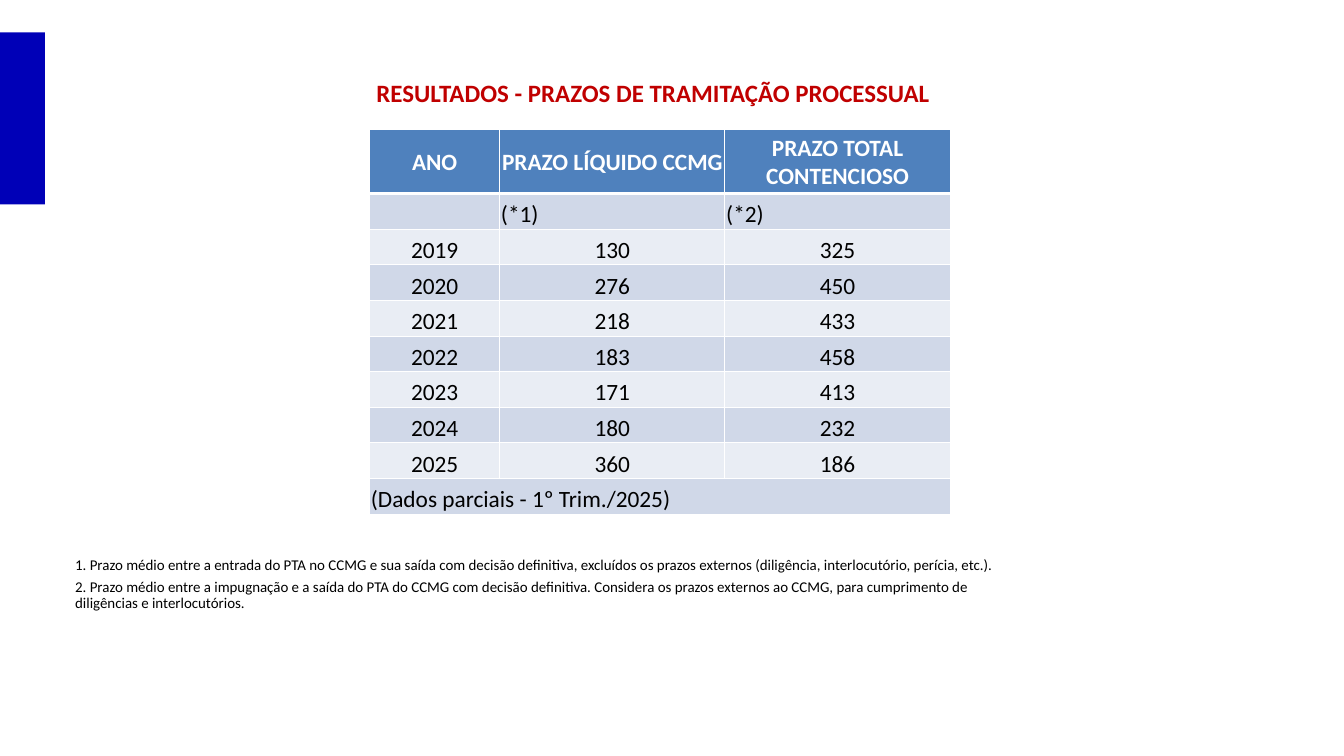
from collections import namedtuple
from dataclasses import dataclass

from lxml import etree
from pptx import Presentation
from pptx import util as u
from pptx.dml.color import RGBColor
from pptx.enum import shapes, text
from pptx.oxml import ns

Box = namedtuple("Box", "left top width height")


@dataclass(frozen=True)
class Theme:
    """Colours, typeface and type sizes of the slide."""
    font: str = "Calibri"
    accent: str = "0000B7"
    title: str = "C00000"
    header: str = "4F81BD"
    bands: tuple = ("D0D8E8", "E9EDF4")
    light: str = "FFFFFF"
    dark: str = "000000"
    title_size: float = 26.7
    table_size: float = 25
    note_size: float = 16


THEME = Theme()
PAGE = Box(0, 0, 20, 11.25)
TITLE = "RESULTADOS - PRAZOS DE TRAMITAÇÃO PROCESSUAL"
HEADINGS = ("ANO", "PRAZO LÍQUIDO CCMG", "PRAZO TOTAL CONTENCIOSO")
MARKS = ("", "(*1)", "(*2)")
TERMS = (
    ("2019", "130", "325"),
    ("2020", "276", "450"),
    ("2021", "218", "433"),
    ("2022", "183", "458"),
    ("2023", "171", "413"),
    ("2024", "180", "232"),
    ("2025", "360", "186"),
)
CAPTION = "(Dados parciais - 1º Trim./2025)"
NOTES = (
    "1. Prazo médio entre a entrada do PTA no CCMG e sua saída com decisão definitiva, "
    "excluídos os prazos externos (diligência, interlocutório, perícia, etc.).",
    "2. Prazo médio entre a impugnação e a saída do PTA do CCMG com decisão definitiva. "
    "Considera os prazos externos ao CCMG, para cumprimento de diligências e interlocutórios.",
)


def inches(box):
    """Return the four lengths of a box as slide units."""
    return [u.Inches(length) for length in box]


def style(para, size, color, bold=False, align=text.PP_ALIGN.LEFT):
    """Set the alignment and font of a paragraph."""
    para.alignment = align
    para.font.name = THEME.font
    para.font.size = u.Pt(size)
    para.font.bold = bold
    para.font.color.rgb = RGBColor.from_string(color)


def add_frame(page, box):
    """Add a wrapping, vertically centred text frame."""
    frame = page.shapes.add_textbox(*inches(box)).text_frame
    frame.word_wrap = True
    frame.vertical_anchor = text.MSO_ANCHOR.MIDDLE
    return frame


def add_accent(page, box):
    """Place the coloured block at the slide's edge."""
    block = page.shapes.add_shape(shapes.MSO_SHAPE.RECTANGLE, *inches(box))
    block.shadow.inherit = False
    block.fill.solid()
    block.fill.fore_color.rgb = RGBColor.from_string(THEME.accent)
    block.line.fill.background()


def add_title(page, box):
    """Place the centred heading."""
    para = add_frame(page, box).paragraphs[0]
    para.text = TITLE
    style(para, THEME.title_size, THEME.title, True, text.PP_ALIGN.CENTER)


def add_borders(cell, top, bottom):
    """Draw the cell's four edges, with widths in points."""
    properties = cell._tc.get_or_add_tcPr()
    for edge, width in (("L", 1), ("R", 1), ("T", top), ("B", bottom)):
        line = etree.SubElement(properties, ns.qn(f"a:ln{edge}"), w=str(u.Pt(width)))
        fill = etree.SubElement(line, ns.qn("a:solidFill"))
        etree.SubElement(fill, ns.qn("a:srgbClr"), val=THEME.light)


def fill_cell(cell, value, row, centred):
    """Write and format one table cell according to its row."""
    header = row == 0
    add_borders(cell, 3 if row == 1 else 1, 3 if header else 1)
    cell.fill.solid()
    color = THEME.header if header else THEME.bands[(row - 1) % 2]
    cell.fill.fore_color.rgb = RGBColor.from_string(color)
    cell.margin_left = cell.margin_right = cell.margin_top = u.Inches(0.02)
    cell.margin_bottom = 0
    cell.vertical_anchor = text.MSO_ANCHOR.MIDDLE if header else text.MSO_ANCHOR.BOTTOM
    para = cell.text_frame.paragraphs[0]
    para.text = value
    align = text.PP_ALIGN.CENTER if centred else text.PP_ALIGN.LEFT
    style(para, THEME.table_size, THEME.light if header else THEME.dark, header, align)


def add_terms_table(page, box):
    """Place the table of processing times by year."""
    rows = (HEADINGS, MARKS, *TERMS, (CAPTION, "", ""))
    table = page.shapes.add_table(len(rows), len(HEADINGS), *inches(box)).table
    year_share, header_share = 0.224, 0.166
    for index, column in enumerate(table.columns):
        share = (1 - year_share) / 2 if index else year_share
        column.width = u.Inches(box.width * share)
    for index, row in enumerate(table.rows):
        share = (1 - header_share) / (len(rows) - 1) if index else header_share
        row.height = u.Inches(box.height * share)
    last = len(rows) - 1
    for row, values in enumerate(rows):
        for column, value in enumerate(values):
            fill_cell(table.cell(row, column), value, row, row not in (1, last))
    table.cell(last, 0).merge(table.cell(last, len(HEADINGS) - 1))


def add_notes(page, box):
    """Place the numbered remarks below the table."""
    frame = add_frame(page, box)
    for index, note in enumerate(NOTES):
        para = frame.add_paragraph() if index else frame.paragraphs[0]
        para.text = note
        para.line_spacing = 0.9
        para.space_after = u.Pt(6)
        para._p.get_or_add_pPr().set("marL", str(u.Inches(0.13)))
        style(para, THEME.note_size, THEME.dark)


def add_results_slide(deck, box):
    """Build the results slide from shares of its box."""
    page = deck.slides.add_slide(deck.slide_layouts[6])

    def part(left, top, width, height):
        """Return the region covering percentages of the slide."""
        return Box(box.left + box.width * left / 100, box.top + box.height * top / 100,
                   box.width * width / 100, box.height * height / 100)

    add_notes(page, part(4.45, 72.18, 72.65, 10.31))
    add_terms_table(page, part(27.5, 17.16, 43.2, 50.84))
    add_title(page, part(24.6, 8.71, 48, 7.11))
    add_accent(page, part(0, 4.27, 3.35, 22.76))


def main():
    """Create and save the deck."""
    deck = Presentation()
    deck.slide_width, deck.slide_height = u.Inches(PAGE.width), u.Inches(PAGE.height)
    add_results_slide(deck, PAGE)
    deck.save("out.pptx")


if __name__ == "__main__":
    main()
